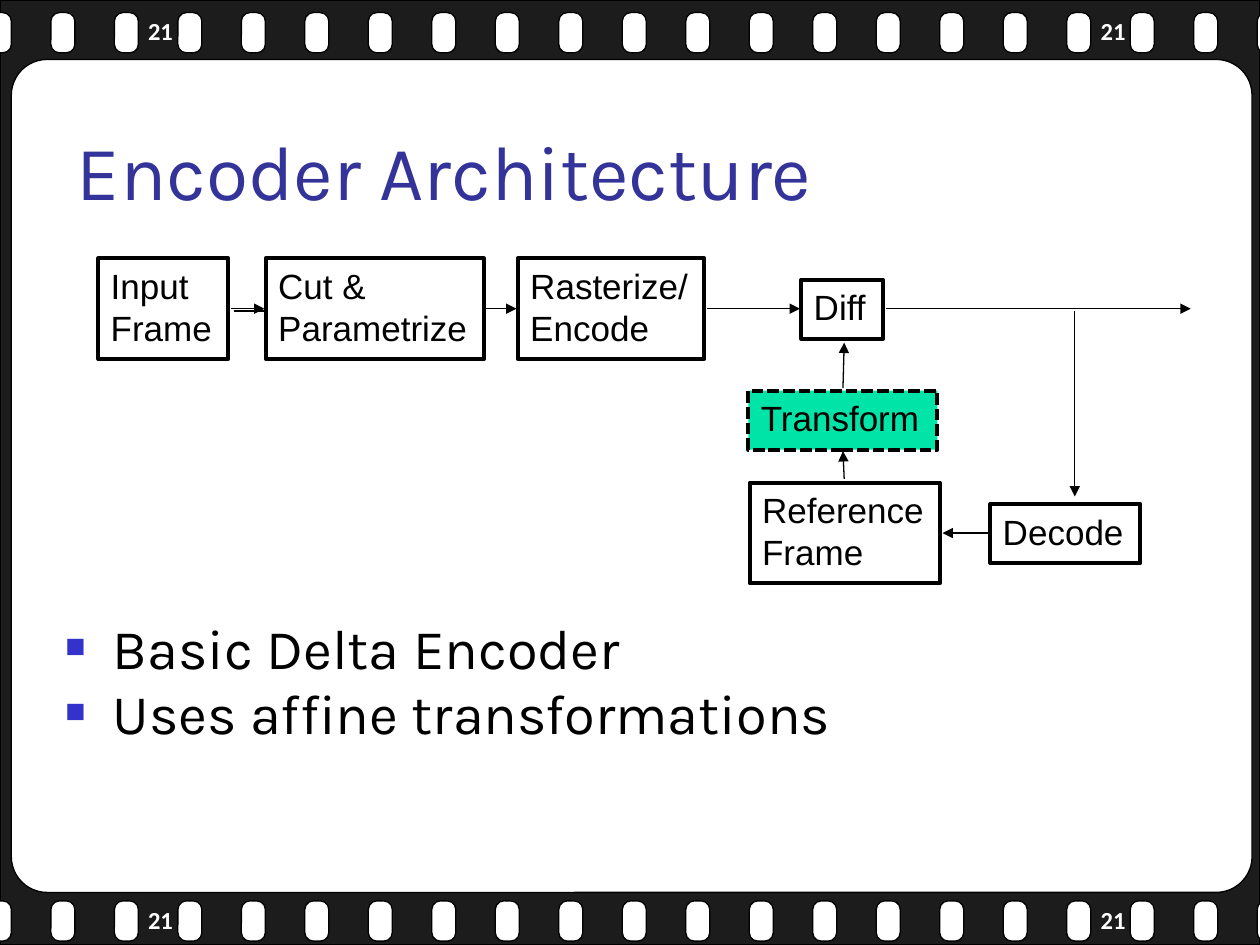
from typing import NamedTuple

from lxml.etree import SubElement
from pptx import Presentation
from pptx.dml.color import RGBColor
from pptx.enum.dml import MSO_LINE
from pptx.enum.shapes import MSO_CONNECTOR, MSO_SHAPE
from pptx.enum.text import MSO_ANCHOR, MSO_AUTO_SIZE, PP_ALIGN
from pptx.oxml.ns import qn
from pptx.util import Pt

BLACK = RGBColor(0x00, 0x00, 0x00)
WHITE = RGBColor(0xFF, 0xFF, 0xFF)
FILM = RGBColor(0x1C, 0x1C, 0x1C)
TITLE_BLUE = RGBColor(0x33, 0x33, 0x99)
BULLET_BLUE = RGBColor(0x33, 0x33, 0xCC)
GREEN = RGBColor(0x00, 0xE4, 0xA8)

HOLE_COUNT, HOLE_PITCH = 21, 36.28
ONE_LINE, TWO_LINES = 33.8, 57.6


class Frame(NamedTuple):
    left: float
    top: float
    width: float
    height: float

    def lengths(self):
        return [Pt(value) for value in self]


class Stage(NamedTuple):
    text: str
    frame: Frame
    fill: RGBColor | None = None
    dash: MSO_LINE | None = None


class Arrow(NamedTuple):
    start: tuple[float, float]
    end: tuple[float, float]
    head: bool = True


STAGES = [
    Stage("Reference\nFrame", Frame(428.4, 275.8, 108.7, TWO_LINES)),
    Stage("Input\nFrame", Frame(56.2, 147.6, 74.2, TWO_LINES)),
    Stage("Cut &\nParametrize", Frame(151.9, 147.6, 124.6, TWO_LINES)),
    Stage("Rasterize/\nEncode", Frame(295.9, 147.6, 106.6, TWO_LINES)),
    Stage("Diff", Frame(457.9, 159.8, 46.8, ONE_LINE)),
    Stage("Transform", Frame(427.7, 223.2, 108, ONE_LINE), GREEN, MSO_LINE.SQUARE_DOT),
    Stage("Decode", Frame(565.9, 288, 85.7, ONE_LINE)),
]

FLOW_Y = 176.4
ARROWS = [
    Arrow((481.7, 221.8), (482.4, 195.8)),
    Arrow((133.9, 177.8), (151.9, 177.8), head=False),
    Arrow((277.9, FLOW_Y), (295.2, FLOW_Y)),
    Arrow((403.9, FLOW_Y), (457.2, FLOW_Y)),
    Arrow((131.8, FLOW_Y), (151.2, FLOW_Y)),
    Arrow((506.2, FLOW_Y), (680.4, FLOW_Y)),
    Arrow((614.2, 177.8), (614.2, 283.7)),
    Arrow((565.2, 304.6), (538.6, 304.6)),
    Arrow((482.4, 273.6), (481.7, 257.8)),
]


def style_text(text_frame, font_name: str, size: float, color: RGBColor,
               align=PP_ALIGN.LEFT, bold: bool = False) -> None:
    for paragraph in text_frame.paragraphs:
        paragraph.alignment = align
        for span in paragraph.runs:
            span.font.name = font_name
            span.font.size = Pt(size)
            span.font.color.rgb = color
            span.font.bold = bold


def add_box(page, kind, frame: Frame, fill: RGBColor | None, line_width: float = 0.75):
    box = page.shapes.add_shape(kind, *frame.lengths())
    box.shadow.inherit = False
    if fill is None:
        box.fill.background()
    else:
        box.fill.solid()
        box.fill.fore_color.rgb = fill
    box.line.color.rgb = BLACK
    box.line.width = Pt(line_width)
    return box


def add_film(page) -> None:
    add_box(page, MSO_SHAPE.RECTANGLE, Frame(0, 0, 720, 540), FILM)
    window = add_box(page, MSO_SHAPE.ROUNDED_RECTANGLE, Frame(6.5, 34, 709, 476), WHITE)
    window.adjustments[0] = 0.043
    for top in (7.2, 514.8):
        for index in range(HOLE_COUNT):
            frame = Frame(-7.2 + index * HOLE_PITCH, top, 13.7, 23)
            hole = add_box(page, MSO_SHAPE.ROUNDED_RECTANGLE, frame, WHITE)
            hole.adjustments[0] = 0.36


def add_frame_number(page, left: float, top: float) -> None:
    box = page.shapes.add_textbox(*Frame(left, top, 149.8, 36).lengths())
    box.text_frame.word_wrap = True
    box.text_frame.vertical_anchor = MSO_ANCHOR.BOTTOM
    box.text_frame.text = "21"
    style_text(box.text_frame, "Calibri", 14, WHITE, PP_ALIGN.RIGHT, bold=True)


def fill_placeholder(page, holder, frame: Frame, text: str, anchor) -> None:
    """Place and fill a placeholder, and bring it in front of the film."""
    holder.left, holder.top, holder.width, holder.height = frame.lengths()
    holder.text_frame.text = text
    holder.text_frame.auto_size = MSO_AUTO_SIZE.NONE
    holder.text_frame.vertical_anchor = anchor
    page.shapes.element.append(holder.element)


def add_bullet(paragraph) -> None:
    properties = paragraph._p.get_or_add_pPr()
    properties.set("marL", str(Pt(27)))
    properties.set("indent", str(-Pt(27)))
    color = SubElement(properties, qn("a:buClr"))
    SubElement(color, qn("a:srgbClr"), val=str(BULLET_BLUE))
    SubElement(properties, qn("a:buSzPct"), val="60000")
    SubElement(properties, qn("a:buFont"), typeface="Arial")
    SubElement(properties, qn("a:buChar"), char="■")


def add_stage(page, stage: Stage) -> None:
    box = add_box(page, MSO_SHAPE.RECTANGLE, stage.frame, stage.fill, 2.25)
    if stage.dash is not None:
        box.line.dash_style = stage.dash
    box.text_frame.text = stage.text
    box.text_frame.word_wrap = False
    box.text_frame.auto_size = MSO_AUTO_SIZE.SHAPE_TO_FIT_TEXT
    box.text_frame.vertical_anchor = MSO_ANCHOR.TOP
    style_text(box.text_frame, "Arial", 20, BLACK)


def add_arrow(page, arrow: Arrow) -> None:
    ends = [Pt(value) for value in (*arrow.start, *arrow.end)]
    line = page.shapes.add_connector(MSO_CONNECTOR.STRAIGHT, *ends)
    line.line.color.rgb = BLACK
    line.line.width = Pt(0.75)
    if arrow.head:
        SubElement(line.line._get_or_add_ln(), qn("a:tailEnd"), type="triangle")
    SubElement(line._element.spPr, qn("a:effectLst"))


def main() -> None:
    deck = Presentation()
    deck.slide_width, deck.slide_height = Pt(720), Pt(540)
    page = deck.slides.add_slide(deck.slide_layouts[1])
    title, body = page.placeholders

    add_film(page)
    for left in (500.4, -43.9):
        for top in (-6.5, 501.5):
            add_frame_number(page, left, top)

    fill_placeholder(page, title, Frame(36.7, 58.3, 663.8, 68.4),
                     "Encoder Architecture", MSO_ANCHOR.BOTTOM)
    style_text(title.text_frame, "Karla", 44, TITLE_BLUE)

    fill_placeholder(page, body, Frame(30.2, 354.2, 648, 124.6),
                     "Basic Delta Encoder\nUses affine transformations", MSO_ANCHOR.TOP)
    for index, paragraph in enumerate(body.text_frame.paragraphs):
        paragraph.line_spacing = 0.8
        paragraph.space_before = Pt(6.4 if index else 0)
        add_bullet(paragraph)
    style_text(body.text_frame, "Karla", 32, BLACK)

    for stage in STAGES:
        add_stage(page, stage)
    for arrow in ARROWS:
        add_arrow(page, arrow)
    deck.save("out.pptx")


if __name__ == "__main__":
    main()
